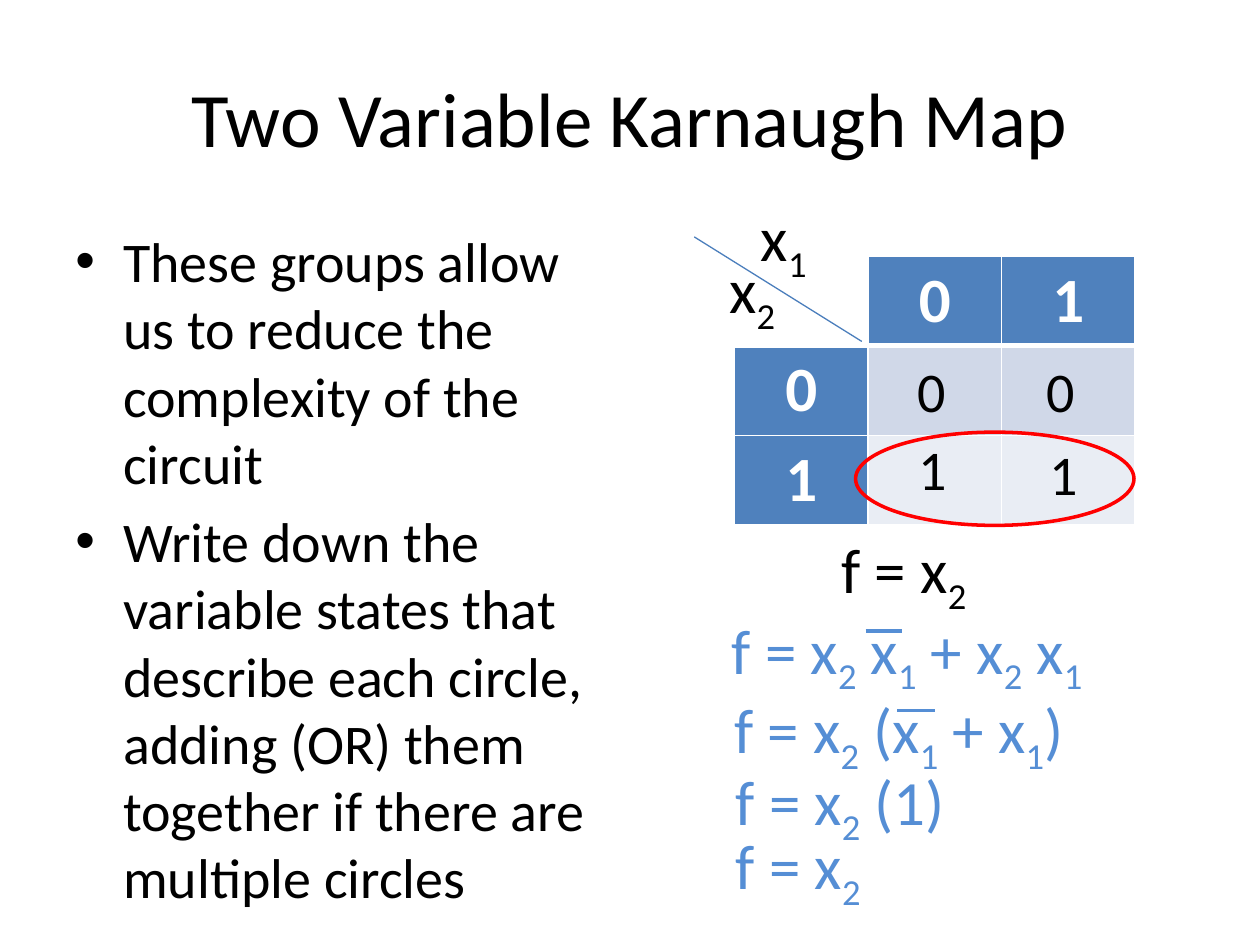
from lxml import etree
from pptx import Presentation
from pptx.dml.color import RGBColor
from pptx.enum.shapes import MSO_CONNECTOR, MSO_SHAPE
from pptx.enum.text import MSO_ANCHOR, PP_ALIGN
from pptx.oxml.ns import qn
from pptx.util import Inches, Pt

TITLE_ONLY = 5
CENTER = PP_ALIGN.CENTER
MIDDLE = MSO_ANCHOR.MIDDLE
STRAIGHT = MSO_CONNECTOR.STRAIGHT
OVAL = MSO_SHAPE.OVAL

THEME = {
    "font": "Calibri",
    "title": 44, "formula": 36, "body": 32,
    "ink": "000000", "paper": "FFFFFF", "header": "4F81BD",
    "bands": ("D0D8E8", "E9EDF4"),
    "diagonal": "4B7EBC", "group": "FF0000", "working": "558ED5",
}

TITLE = "Two Variable Karnaugh Map"
BULLETS = [
    "These groups allow us to reduce the complexity of the circuit",
    "Write down the variable states that describe each circle, "
    "adding (OR) them together if there are multiple circles",
]
MAP_LABELS = [["", "0", "1"], ["0", "", ""], ["1", "", ""]]
MAP_VALUES = [("0", 7.18, 2.78), ("0", 8.21, 2.78),
              ("1", 7.19, 3.40), ("1", 8.23, 3.44)]
# "_" puts the next character in subscript: text, left, top, width, colour
FORMULAS = [
    ("x_1", 5.94, 1.53, 0.75, "ink"),
    ("x_2", 5.69, 1.94, 0.75, "ink"),
    ("f = x_2", 6.58, 4.16, 1.68, "ink"),
    ("f = x_2 x_1 + x_2 x_1", 5.71, 4.80, 3.49, "working"),
    ("f = x_2 (x_1 + x_1)", 5.73, 5.43, 3.49, "working"),
    ("f = x_2 (1)", 5.74, 6.00, 3.84, "working"),
    ("f = x_2", 5.74, 6.51, 1.38, "working"),
]
# start, end, colour, width
LINES = [
    ((6.84, 2.71), (5.51, 1.88), "diagonal", 0.75),
    ((6.87, 5.01), (7.16, 5.01), "working", 2),
    ((7.12, 5.64), (7.42, 5.64), "working", 2),
]
MAP_LEFT, MAP_TOP, CELL_WIDTH, CELL_HEIGHT = 5.83, 2.03, 1.06, 0.7


def color(name):
    return RGBColor.from_string(THEME.get(name, name))


def style_run(run, size, ink="ink", bold=False):
    run.font.name = THEME["font"]
    run.font.size = Pt(THEME[size])
    run.font.color.rgb = color(ink)
    run.font.bold = bold


def add_text_box(slide, left, top, width, height):
    box = slide.shapes.add_textbox(*map(Inches, (left, top, width, height)))
    box.text_frame.word_wrap = True
    return box.text_frame


def add_formula(slide, text, left, top, width, ink):
    paragraph = add_text_box(slide, left, top, width, 0.71).paragraphs[0]
    base, *rest = text.split("_")
    pieces = [(base, False)]
    for part in rest:
        pieces += [(part[0], True), (part[1:], False)]
    for piece, subscript in pieces:
        if piece:
            run = paragraph.add_run()
            run.text = piece
            style_run(run, "formula", ink)
            if subscript:
                run.font._element.set("baseline", "-25000")


def add_bullets(slide):
    frame = add_text_box(slide, 0.5, 1.75, 4.5, 5.17)
    frame.text = "\n".join(BULLETS)
    for paragraph in frame.paragraphs:
        paragraph.space_before = Pt(6.4)
        style_run(paragraph.runs[0], "body")
        properties = paragraph._p.get_or_add_pPr()
        properties.set("marL", str(Inches(0.38)))
        properties.set("indent", str(Inches(-0.38)))
        etree.SubElement(properties, qn("a:buFont")).set("typeface", "Arial")
        etree.SubElement(properties, qn("a:buChar")).set("char", "•")


def add_borders(cell, bottom):
    properties = cell._tc.get_or_add_tcPr()
    for side, width in (("L", 1), ("R", 1), ("T", 1), ("B", bottom)):
        border = etree.SubElement(properties, qn(f"a:ln{side}"), w=str(Pt(width)))
        fill = etree.SubElement(border, qn("a:solidFill"))
        etree.SubElement(fill, qn("a:srgbClr"), val=THEME["paper"])


def add_map(slide):
    size = len(MAP_LABELS)
    table = slide.shapes.add_table(
        size, size, Inches(MAP_LEFT), Inches(MAP_TOP),
        Inches(size * CELL_WIDTH), Inches(size * CELL_HEIGHT)).table
    table.first_row = table.horz_banding = False
    for r, labels in enumerate(MAP_LABELS):
        table.rows[r].height = Inches(CELL_HEIGHT)
        table.columns[r].width = Inches(CELL_WIDTH)
        for c, label in enumerate(labels):
            cell = table.cell(r, c)
            add_borders(cell, 3 if r == 0 else 1)
            if label:
                fill = "header"
            else:
                fill = THEME["bands"][r - 1] if r else "paper"
            cell.fill.solid()
            cell.fill.fore_color.rgb = color(fill)
            if label:
                cell.text_frame.text = label
                cell.vertical_anchor = MIDDLE
                paragraph = cell.text_frame.paragraphs[0]
                paragraph.alignment = CENTER
                style_run(paragraph.runs[0], "formula", "paper", bold=True)


def add_line(slide, start, end, ink, width):
    line = slide.shapes.add_connector(STRAIGHT, *map(Inches, start + end))
    line.line.color.rgb = color(ink)
    line.line.width = Pt(width)
    etree.SubElement(line._element.spPr, qn("a:effectLst"))


def add_group_circle(slide):
    circle = slide.shapes.add_shape(OVAL, *map(Inches, (6.79, 3.43, 2.21, 0.74)))
    circle.shadow.inherit = False
    circle.fill.background()
    circle.line.color.rgb = color("group")
    circle.line.width = Pt(2)


def main():
    deck = Presentation()
    deck.slide_width, deck.slide_height = Inches(10), Inches(7.5)
    slide = deck.slides.add_slide(deck.slide_layouts[TITLE_ONLY])

    title = slide.shapes.title
    title.left, title.top, title.width, title.height = map(
        Inches, (0.5, 0.3, 9, 1.25))
    title.text_frame.text = TITLE
    title.text_frame.vertical_anchor = MIDDLE
    title.text_frame.paragraphs[0].alignment = CENTER
    style_run(title.text_frame.paragraphs[0].runs[0], "title")

    add_map(slide)
    for value, left, top in MAP_VALUES:
        frame = add_text_box(slide, left, top, 0.48, 0.64)
        frame.text = value
        style_run(frame.paragraphs[0].runs[0], "body")
    add_bullets(slide)
    add_group_circle(slide)
    for formula in FORMULAS:
        add_formula(slide, *formula)
    for line in LINES:
        add_line(slide, *line)
    deck.save("out.pptx")


if __name__ == "__main__":
    main()
